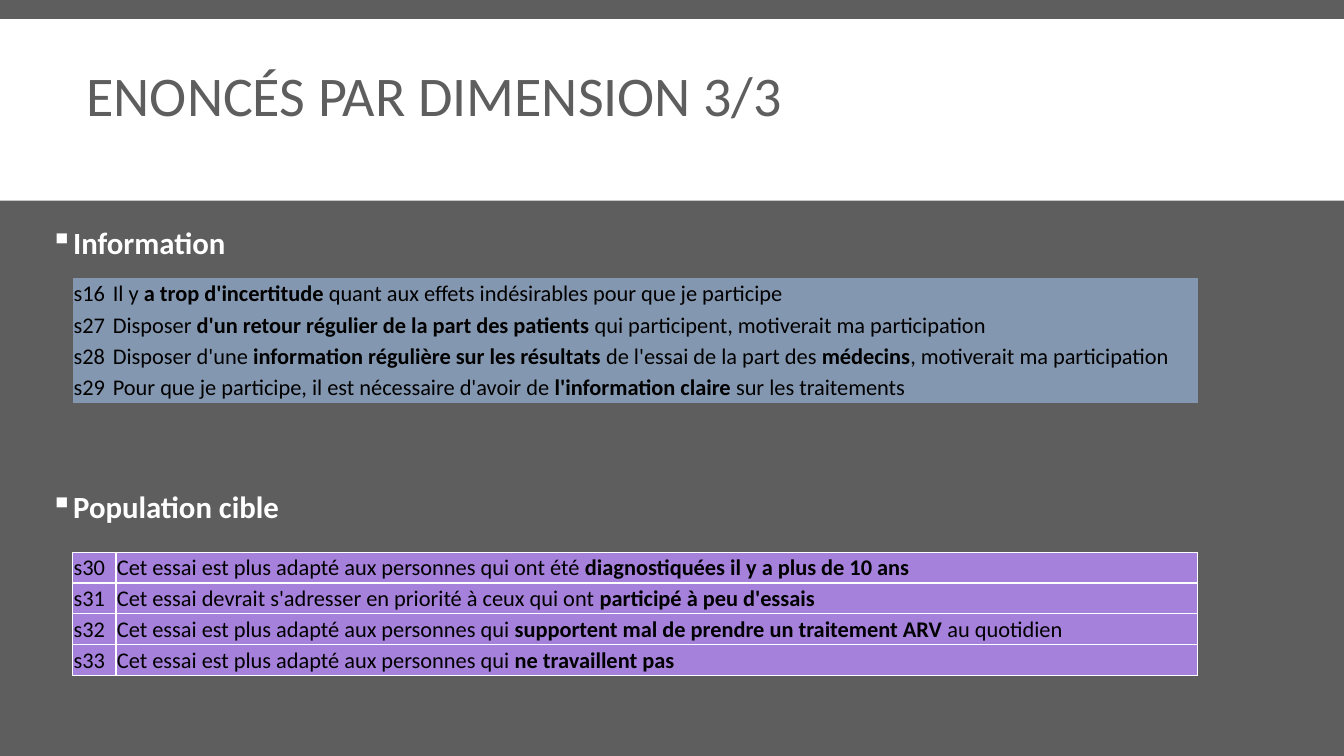
"""Build the slide listing the statements of two dimensions, one table each."""
from lxml import etree
from pptx import Presentation
from pptx.dml.color import RGBColor
from pptx.enum.shapes import MSO_SHAPE
from pptx.enum.text import MSO_ANCHOR
from pptx.oxml.ns import qn
from pptx.util import Inches, Pt

RECTANGLE = MSO_SHAPE.RECTANGLE
MIDDLE = MSO_ANCHOR.MIDDLE
GREY = RGBColor(0x5E, 0x5E, 0x5E)
WHITE = RGBColor(0xFF, 0xFF, 0xFF)
BLACK = RGBColor(0x00, 0x00, 0x00)
BLUE = RGBColor(0x84, 0x97, 0xB0)
PURPLE = RGBColor(0xA5, 0x81, 0xDB)
FONT = "Calibri"
TABLE_LEFT, TABLE_WIDTH = 0.72, 11.16
INDENT = Inches(0.2)

# Every second part of a statement, split at "*", is bold.
DIMENSIONS = [
    ("Information", 2.21, 2.76, 0.39, 0.31, BLUE, False, [
        ("s16", "Il y *a trop d'incertitude *quant aux effets indésirables pour que je participe"),
        ("s27", "Disposer *d'un retour régulier de la part des patients *"
                "qui participent, motiverait ma participation"),
        ("s28", "Disposer d'une *information régulière sur les résultats *"
                "de l'essai de la part des *médecins*, motiverait ma participation"),
        ("s29", "Pour que je participe, il est nécessaire d'avoir de *"
                "l'information claire *sur les traitements"),
    ]),
    ("Population cible", 4.83, 5.48, 0.43, 0.305, PURPLE, True, [
        ("s30", "Cet essai est plus adapté aux personnes qui ont été *"
                "diagnostiquées il y a plus de 10 ans"),
        ("s31", "Cet essai devrait s'adresser en priorité à ceux qui ont *participé à peu d'essais"),
        ("s32", "Cet essai est plus adapté aux personnes qui *"
                "supportent mal de prendre un traitement ARV *au quotidien"),
        ("s33", "Cet essai est plus adapté aux personnes qui *ne travaillent pas"),
    ]),
]


def add_text(page, text, left, top, width, height, size, color, spacing):
    """Add a one-paragraph text box and return its paragraph."""
    box = page.shapes.add_textbox(Inches(left), Inches(top), Inches(width), Inches(height))
    box.text_frame.word_wrap = True
    para = box.text_frame.paragraphs[0]
    para.text = text
    para.line_spacing = spacing
    para.font.name, para.font.size, para.font.color.rgb = FONT, Pt(size), color
    return para


def fill_cell(cell, statement, color, bordered):
    """Write a statement in a cell and set its fill, margins and borders."""
    cell.margin_left = cell.margin_right = cell.margin_top = Inches(0.01)
    cell.margin_bottom = 0
    cell.vertical_anchor = MIDDLE
    para = cell.text_frame.paragraphs[0]
    para.font.name, para.font.size, para.font.color.rgb = FONT, Pt(16), BLACK
    for index, part in enumerate(statement.split("*")):
        if part:
            span = para.add_run()
            span.text = part
            span.font.bold = index % 2 == 1
    properties = cell._tc.get_or_add_tcPr()
    for side in ("a:lnL", "a:lnR", "a:lnT", "a:lnB"):
        line = etree.SubElement(properties, qn(side), w=str(Pt(1)))
        if bordered:
            paint = etree.SubElement(line, qn("a:solidFill"))
            etree.SubElement(paint, qn("a:srgbClr"), val=str(WHITE))
        else:
            etree.SubElement(line, qn("a:noFill"))
    cell.fill.solid()
    cell.fill.fore_color.rgb = color


deck = Presentation()
deck.slide_width, deck.slide_height = Inches(13.33), Inches(7.5)
page = deck.slides.add_slide(deck.slide_layouts[6])
page.background.fill.solid()
page.background.fill.fore_color.rgb = GREY

band = page.shapes.add_shape(RECTANGLE, 0, Inches(0.19), deck.slide_width, Inches(1.8))
band.shadow.inherit = False
band.fill.solid()
band.fill.fore_color.rgb = WHITE
band.line.fill.background()

title = add_text(page, "ENONCÉS PAR DIMENSION 3/3", 0.76, 0.65, 9.75, 0.77, 40, GREY, 0.85)

for heading, heading_top, table_top, code_width, row_height, color, bordered, rows in DIMENSIONS:
    para = add_text(page, heading, 0.4, heading_top, 11.79, 0.45, 22, WHITE, 0.9)
    para.font.bold = True
    properties = para._p.get_or_add_pPr()
    properties.set("marL", str(INDENT))
    properties.set("indent", str(-INDENT))
    bullet = etree.Element(qn("a:buChar"), char="▪")
    properties.find(qn("a:defRPr")).addprevious(bullet)

    table = page.shapes.add_table(
        len(rows), 2, Inches(TABLE_LEFT), Inches(table_top),
        Inches(TABLE_WIDTH), Inches(row_height * len(rows))).table
    table.first_row = table.horz_banding = False
    table.columns[0].width = Inches(code_width)
    table.columns[1].width = Inches(TABLE_WIDTH - code_width)
    for row, statements in zip(table.rows, rows):
        row.height = Inches(row_height)
        for cell, statement in zip(row.cells, statements):
            fill_cell(cell, statement, color, bordered)

deck.save("out.pptx")
